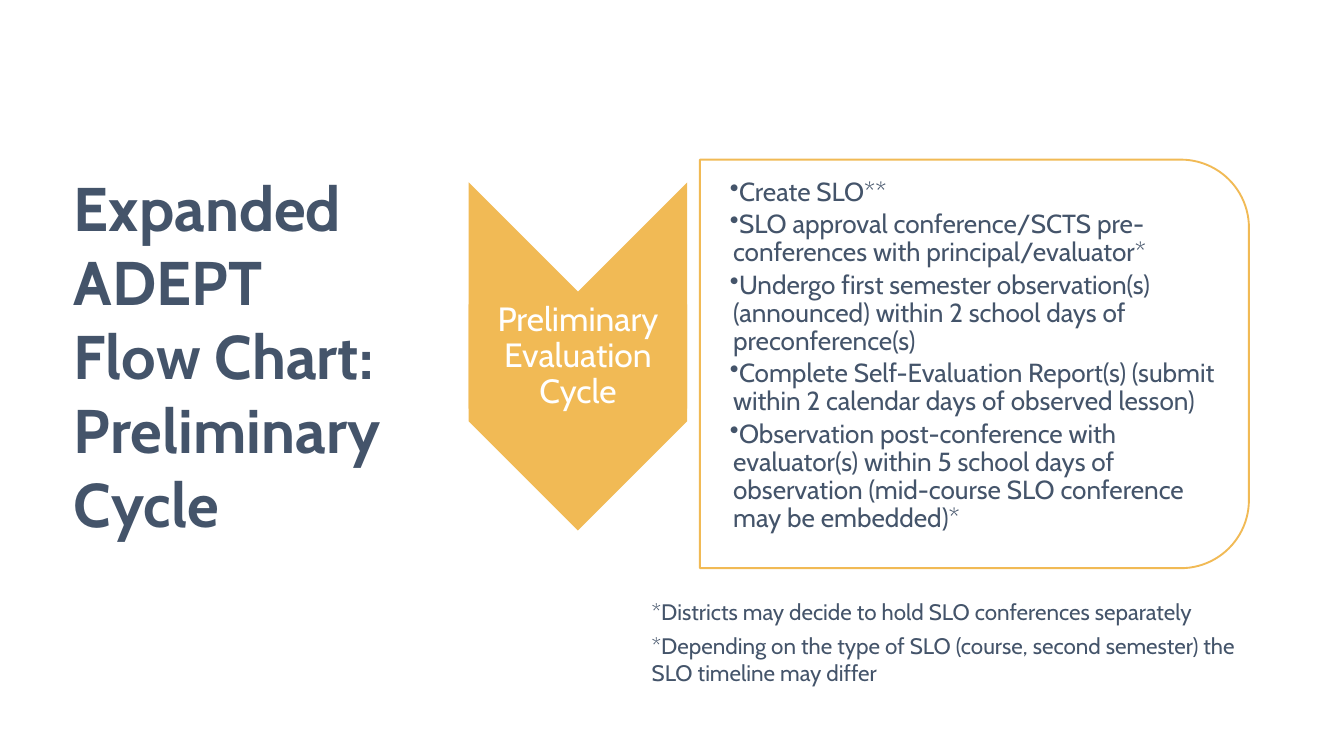
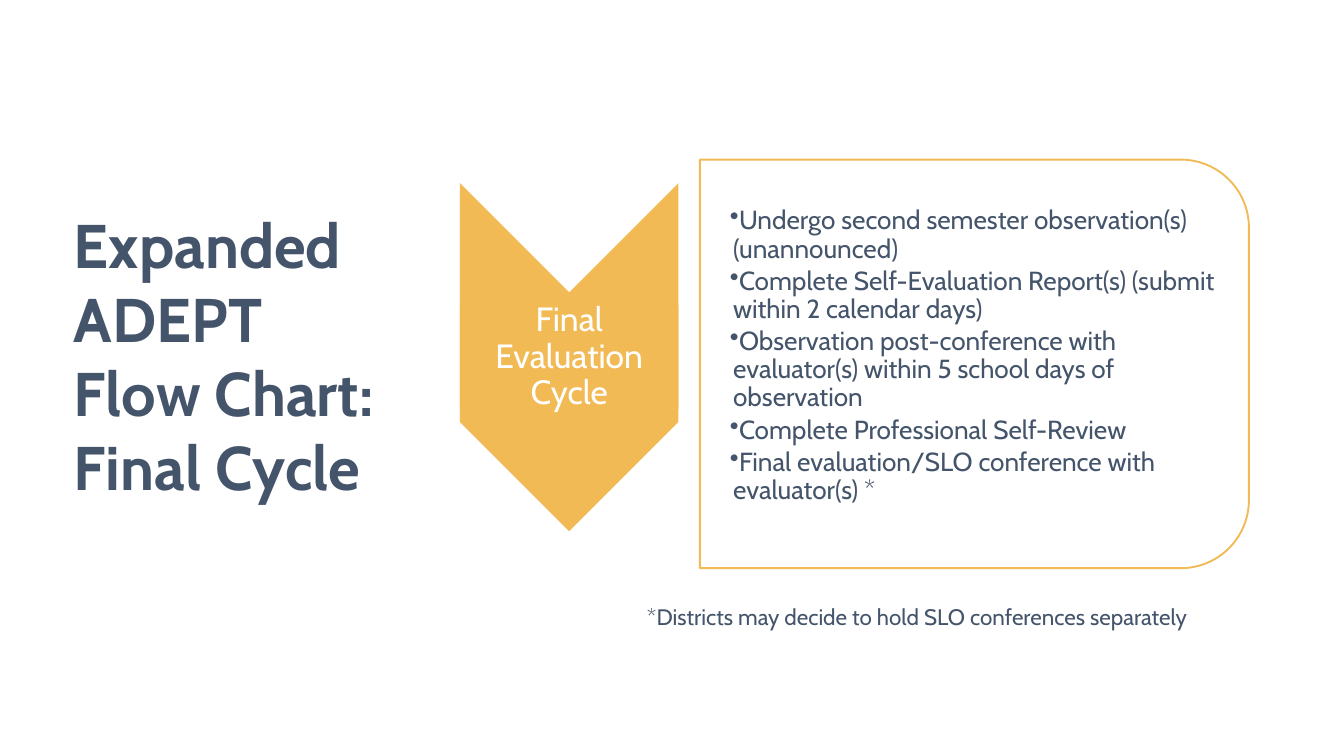
"""Build the two flow chart slides of the Expanded ADEPT evaluation cycles."""
from lxml import etree
from pptx import Presentation
from pptx.dml.color import RGBColor
from pptx.enum import shapes, text
from pptx.oxml import ns
from pptx.util import Inches, Pt

FONT = "Cabin"
INK, GOLD, WHITE = "44546A", "F1BA55", "FFFFFF"
SEPARATE = "*Districts may decide to hold SLO conferences separately"

CYCLES = [
    {
        "cycle": "Preliminary",
        "steps": [
            "Create SLO**",
            "SLO approval conference/SCTS pre-conferences with principal/evaluator*",
            "Undergo first semester observation(s) (announced) within 2 school days of preconference(s)",
            "Complete Self-Evaluation Report(s) (submit within 2 calendar days of observed lesson)",
            "Observation post-conference with evaluator(s) within 5 school days of observation "
            "(mid-course SLO conference may be embedded)*",
        ],
        "notes": [
            SEPARATE,
            "*Depending on the type of SLO (course, second semester) the SLO timeline may differ",
        ],
        "arrow_at": (6.01, 3.68),
        "notes_at": (9.22, 8.85, 9.37, 1.42),
    },
    {
        "cycle": "Final",
        "steps": [
            "Undergo second semester observation(s) (unannounced)",
            "Complete Self-Evaluation Report(s) (submit within 2 calendar days)",
            "Observation post-conference with evaluator(s) within 5 school days of observation",
            "Complete Professional Self-Review",
            "Final evaluation/SLO conference with evaluator(s) *",
        ],
        "notes": [SEPARATE],
        "arrow_at": (5.88, 3.69),
        "notes_at": (9.15, 8.93, 9.4, 0.5),
    },
]

ARROW_W, ARROW_H = 5.18, 3.25
LABEL_W, LABEL_H = 3.25, 1.55
TITLE_AT = (1, 1.38, 5.08, 7.8)
PANEL_AT = (11.46, 1.33, 6.08, 8.17)
STEPS_AT = (10.8, 2.71, 7.46, 5.18)


def color(value):
    return RGBColor.from_string(value)


def inches(values):
    return [Inches(value) for value in values]


def write(holder, paragraphs, *, size, ink=INK, bold=False, align=text.PP_ALIGN.LEFT,
          anchor=text.MSO_ANCHOR.MIDDLE, insets=(0.1, 0.05, 0.1, 0.05),
          spacing=1.0, after=0, indent=(0, 0), bullet=None):
    frame = holder.text_frame
    frame.word_wrap = True
    frame.auto_size = text.MSO_AUTO_SIZE.NONE
    frame.vertical_anchor = anchor
    (frame.margin_left, frame.margin_top,
     frame.margin_right, frame.margin_bottom) = inches(insets)
    for index, words in enumerate(paragraphs):
        paragraph = frame.add_paragraph() if index else frame.paragraphs[0]
        paragraph.text = words
        props = paragraph._p.get_or_add_pPr()
        props.set("marL", str(Inches(indent[0])))
        props.set("indent", str(Inches(indent[1])))
        if bullet:
            etree.SubElement(props, ns.qn("a:buChar")).set("char", bullet)
        paragraph.alignment = align
        paragraph.line_spacing = spacing
        paragraph.space_after = Pt(after)
        font = paragraph.font
        font.name, font.size, font.bold = FONT, Pt(size), bold
        font.color.rgb = color(ink)


def add_block(slide, kind, place, fill, *, line=None, rotation=0, opacity=100):
    block = slide.shapes.add_shape(kind, *inches(place))
    block.shadow.inherit = False
    block.rotation = rotation
    block.fill.solid()
    block.fill.fore_color.rgb = color(fill)
    if opacity < 100:
        shade = block._element.spPr.find(ns.qn("a:solidFill"))[0]
        etree.SubElement(shade, ns.qn("a:alpha")).set("val", str(opacity * 1000))
    if line:
        block.line.color.rgb = color(line)
        block.line.width = Pt(2)
    else:
        block.line.fill.background()
    return block


def add_cycle(deck, content):
    slide = deck.slides.add_slide(deck.slide_layouts[5])
    title = slide.shapes.title
    title.left, title.top, title.width, title.height = inches(TITLE_AT)
    write(title, [f"Expanded ADEPT Flow Chart:\v{content['cycle']} Cycle"], size=66, bold=True)

    left, top = content["arrow_at"]
    add_block(slide, shapes.MSO_SHAPE.CHEVRON, (left, top, ARROW_W, ARROW_H), GOLD, rotation=90)
    label_at = (left + (ARROW_W - LABEL_W) / 2, top + (ARROW_H - LABEL_H) / 2, LABEL_W, LABEL_H)
    label = add_block(slide, shapes.MSO_SHAPE.RECTANGLE, label_at, GOLD)
    write(label, [f"{content['cycle']} Evaluation Cycle"], size=36, ink=WHITE,
          align=text.PP_ALIGN.CENTER, insets=(0.01,) * 4, spacing=0.9, after=12.6)

    add_block(slide, shapes.MSO_SHAPE.ROUND_2_SAME_RECTANGLE, PANEL_AT, WHITE,
              line=GOLD, rotation=90, opacity=90)
    steps = slide.shapes.add_textbox(*inches(STEPS_AT))
    write(steps, content["steps"], size=28, insets=(0.06, 0.01, 0.01, 0.01),
          spacing=0.9, after=4.2, indent=(0.05, -0.05), bullet="•")

    notes = slide.shapes.add_textbox(*inches(content["notes_at"]))
    write(notes, content["notes"], size=24, anchor=text.MSO_ANCHOR.TOP,
          after=7.5, indent=(0.38, 0))


def main():
    deck = Presentation()
    deck.slide_width, deck.slide_height = inches((20, 11.25))
    for content in CYCLES:
        add_cycle(deck, content)
    deck.save("out.pptx")


if __name__ == "__main__":
    main()
